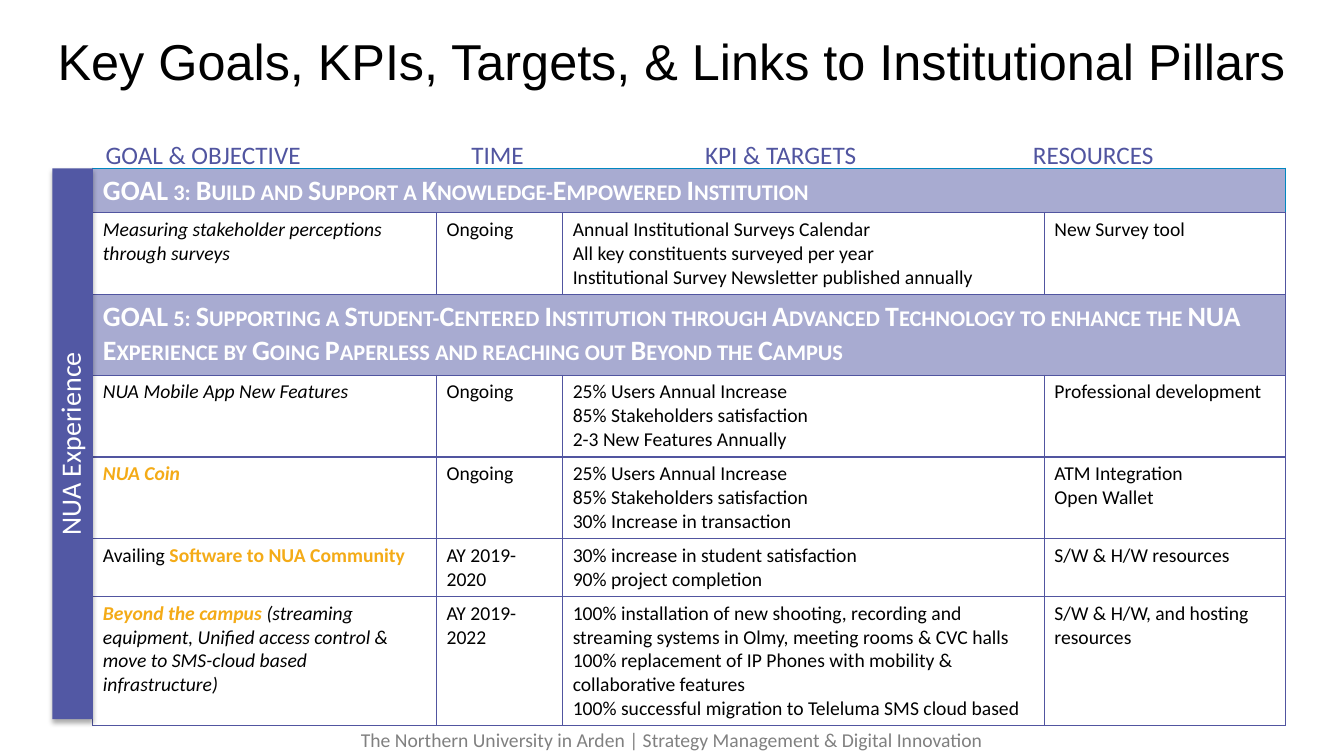
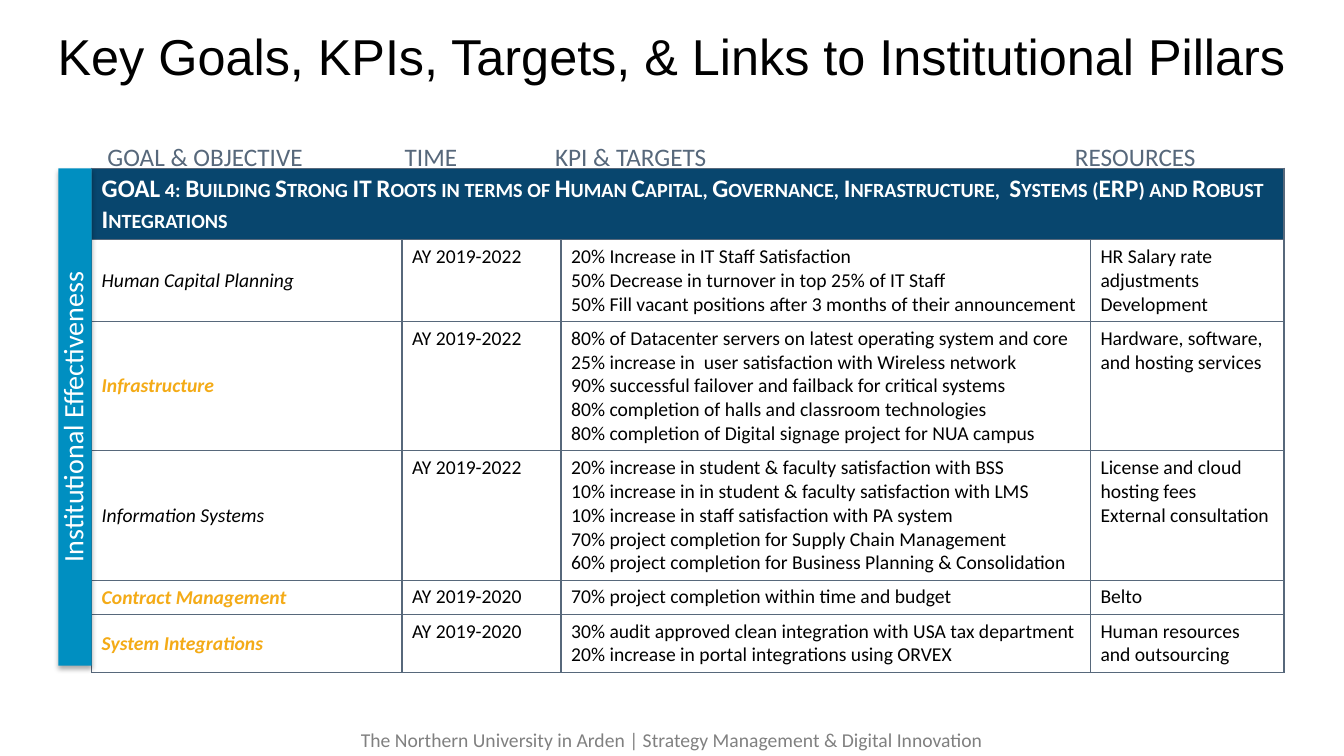
"""Build two slides of strategic goals with KPI tables and pillar bars."""
import pptx
import pptx.dml.color
import pptx.enum.shapes
import pptx.enum.text
import pptx.oxml
import pptx.oxml.ns
import pptx.util

Cm = pptx.util.Cm
Pt = pptx.util.Pt
RGBColor = pptx.dml.color.RGBColor
ALIGN = pptx.enum.text.PP_ALIGN
ANCHOR = pptx.enum.text.MSO_ANCHOR

BLACK = RGBColor(0x00, 0x00, 0x00)
WHITE = RGBColor(0xFF, 0xFF, 0xFF)
GREY = RGBColor(0x80, 0x80, 0x80)
ORANGE = RGBColor(0xF4, 0xAB, 0x17)
VIOLET = RGBColor(0x52, 0x58, 0xA4)
VIOLET_LINE = RGBColor(0x51, 0x55, 0xA0)
BLUE = RGBColor(0x00, 0x8F, 0xC1)
BLUE_LINE = RGBColor(0x01, 0x87, 0xC0)
NAVY = RGBColor(0x08, 0x46, 0x6E)
SLATE = RGBColor(0x57, 0x68, 0x7B)

SLIDE_WIDTH, SLIDE_HEIGHT = Cm(33.87), Cm(19.05)
TABLE_TOP = Cm(4.24)
TITLE = "Key Goals, KPIs, Targets, & Links to Institutional Pillars"
FOOTER = "The Northern University in Arden | Strategy Management & Digital Innovation"
LABELS = ["GOAL & OBJECTIVE", "TIME", "KPI & TARGETS", "RESOURCES"]

PLAIN = {"size": Pt(14), "name": "Calibri", "color": BLACK}
ITALIC = {**PLAIN, "italic": True}
STRONG = {**PLAIN, "bold": True, "color": ORANGE}
ACCENT = {**STRONG, "italic": True}
TITLE_FORMAT = {"size": Pt(36), "name": "Arial", "color": BLACK}
FOOTER_FORMAT = {**PLAIN, "color": GREY}
BAR_FORMAT = {**PLAIN, "size": Pt(20), "color": WHITE}
GOAL_FORMAT = {**BAR_FORMAT, "bold": True}

SLIDES = [
    {
        "title_top": Cm(0.2),
        "pillar": "NUA Experience",
        "bar_color": VIOLET,
        "bar_width": Cm(1.02),
        "table_left": Cm(2.34),
        "line_color": VIOLET_LINE,
        "goal_fill": VIOLET,
        "goal_alpha": 50,
        "goal_size": Pt(20),
        "top_edge": BLUE_LINE,
        "objective_anchor": ANCHOR.TOP,
        "label_place": (Cm(2.41), Cm(3.38)),
        "label_tabs": [Cm(9.22), Cm(15.11), Cm(23.37)],
        "columns": [8.66, 3.18, 12.14, 6.07],
        "heights": [1.08, 2.04, 2.04, 2.04, 2.04, 1.44, 3.2],
        "rows": [
            "GOAL 3: Build and Support a Knowledge-Empowered Institution",
            ([("Measuring stakeholder perceptions through surveys", ITALIC)], "Ongoing",
             ["Annual Institutional Surveys Calendar",
              "All key constituents surveyed per year",
              "Institutional Survey Newsletter published annually"],
             ["New Survey tool"]),
            "GOAL 5: Supporting a Student-Centered Institution through Advanced Technology "
            "to enhance the NUA Experience by Going Paperless and reaching out Beyond the Campus",
            ([("NUA Mobile App New Features", ITALIC)], "Ongoing",
             ["25% Users Annual Increase", "85% Stakeholders satisfaction",
              "2-3 New Features Annually"],
             ["Professional development"]),
            ([("NUA Coin", ACCENT)], "Ongoing",
             ["25% Users Annual Increase", "85% Stakeholders satisfaction",
              "30% Increase in transaction"],
             ["ATM Integration", "Open Wallet"]),
            ([("Availing ", PLAIN), ("Software to NUA Community", STRONG)], "AY 2019-2020",
             ["30% increase in student satisfaction", "90% project completion"],
             ["S/W & H/W resources"]),
            ([("Beyond the campus ", ACCENT),
              ("(streaming equipment, Unified access control & move to SMS-cloud "
               "based infrastructure)", ITALIC)], "AY 2019-2022",
             ["100% installation of new shooting, recording and streaming systems in Olmy, "
              "meeting rooms & CVC halls",
              "100% replacement of IP Phones with mobility & collaborative features",
              "100% successful migration to Teleluma SMS cloud based"],
             ["S/W & H/W, and hosting resources"]),
        ],
    },
    {
        "title_top": Cm(0.08),
        "pillar": "Institutional Effectiveness",
        "bar_color": BLUE,
        "bar_width": Cm(0.84),
        "table_left": Cm(2.31),
        "line_color": SLATE,
        "goal_fill": NAVY,
        "goal_alpha": 100,
        "goal_size": Pt(18),
        "top_edge": SLATE,
        "objective_anchor": ANCHOR.MIDDLE,
        "label_place": (Cm(2.46), Cm(3.43)),
        "label_tabs": [Cm(7.49), Cm(11.28), Cm(24.38)],
        "columns": [7.82, 4.01, 13.34, 4.88],
        "heights": [1.78, 2.04, 3.21, 3.21, 0.86, 1.43],
        "rows": [
            "GOAL 4: Building Strong IT Roots in terms of Human Capital, Governance, "
            "Infrastructure,  Systems (ERP) and Robust Integrations",
            ([("Human Capital Planning", ITALIC)], "AY 2019-2022",
             ["20% Increase in IT Staff Satisfaction",
              "50% Decrease in turnover in top 25% of IT Staff",
              "50% Fill vacant positions after 3 months of their announcement"],
             ["HR Salary rate adjustments", "Development"]),
            ([("Infrastructure", ACCENT)], "AY 2019-2022",
             ["80% of Datacenter servers on latest operating system and core",
              "25% increase in  user satisfaction with Wireless network",
              "90% successful failover and failback for critical systems",
              "80% completion of halls and classroom technologies",
              "80% completion of Digital signage project for NUA campus"],
             ["Hardware, software, and hosting services"]),
            ([("Information Systems", ITALIC)], "AY 2019-2022",
             ["20% increase in student & faculty satisfaction with BSS",
              "10% increase in in student & faculty satisfaction with LMS",
              "10% increase in staff satisfaction with PA system",
              "70% project completion for Supply Chain Management",
              "60% project completion for Business Planning & Consolidation"],
             ["License and cloud hosting fees", "External consultation"]),
            ([("Contract Management", ACCENT)], "AY 2019-2020",
             ["70% project completion within time and budget"], ["Belto"]),
            ([("System Integrations", ACCENT)], "AY 2019-2020",
             ["30% audit approved clean integration with USA tax department",
              "20% increase in portal integrations using ORVEX"],
             ["Human resources and outsourcing"]),
        ],
    },
]


def add_xml(parent, tag, **attributes):
    element = pptx.oxml.parse_xml(f"<a:{tag} {pptx.oxml.ns.nsdecls('a')}/>")
    for name, value in attributes.items():
        element.set(name, str(value))
    parent.append(element)
    return element


def add_run(paragraph, text, formats):
    run = paragraph.add_run()
    run.text = text
    for name, value in formats.items():
        if name == "color":
            run.font.color.rgb = value
        else:
            setattr(run.font, name, value)
    return run


def write_lines(frame, lines, formats):
    for index, line in enumerate(lines):
        paragraph = frame.add_paragraph() if index else frame.paragraphs[0]
        add_run(paragraph, line, formats)


def add_text(slide, place, text, formats, alignment):
    frame = slide.shapes.add_textbox(*place).text_frame
    frame.word_wrap = True
    paragraph = frame.paragraphs[0]
    paragraph.alignment = alignment
    add_run(paragraph, text, formats)
    return paragraph


def set_title(slide, top):
    title = slide.shapes.title
    title.left, title.top, title.width, title.height = 0, top, SLIDE_WIDTH, Cm(2.84)
    settings = {"margin_left": 0, "margin_right": 0, "margin_top": Cm(0.18),
                "margin_bottom": Cm(0.18), "vertical_anchor": ANCHOR.MIDDLE,
                "word_wrap": True, "auto_size": pptx.enum.text.MSO_AUTO_SIZE.NONE}
    for name, value in settings.items():
        setattr(title.text_frame, name, value)
    paragraph = title.text_frame.paragraphs[0]
    paragraph.alignment = ALIGN.CENTER
    paragraph.line_spacing = 0.9
    add_run(paragraph, TITLE, TITLE_FORMAT)


def set_borders(cell, colors):
    properties = cell._tc.get_or_add_tcPr()
    for side, color in zip(("lnL", "lnR", "lnT", "lnB"), colors):
        line = add_xml(properties, side, w=Pt(1))
        add_xml(add_xml(line, "solidFill"), "srgbClr", val=color)


def fill_goal(cell, text, content):
    run = add_run(cell.text_frame.paragraphs[0], text,
                  {**GOAL_FORMAT, "size": content["goal_size"]})
    run._r.get_or_add_rPr().set("cap", "small")
    cell.fill.solid()
    cell.fill.fore_color.rgb = content["goal_fill"]
    color = cell._tc.tcPr.find(".//" + pptx.oxml.ns.qn("a:solidFill") + "[last()]")
    fill = cell._tc.tcPr.findall(pptx.oxml.ns.qn("a:solidFill"))[-1]
    add_xml(fill[0], "alpha", val=content["goal_alpha"] * 1000)


def add_goal_table(slide, content):
    widths, heights = content["columns"], content["heights"]
    frame = slide.shapes.add_table(len(heights), len(widths), content["table_left"], TABLE_TOP,
                                   Cm(sum(widths)), Cm(sum(heights)))
    table = frame.table
    table.first_row = table.horz_banding = False
    for column, width in zip(table.columns, widths):
        column.width = Cm(width)
    for index, (row, height, values) in enumerate(zip(table.rows, heights, content["rows"])):
        row.height = Cm(height)
        edge = content["line_color"] if index else content["top_edge"]
        cells = list(row.cells)
        for cell in cells:
            set_borders(cell, (edge, edge, edge, content["line_color"]))
            cell.fill.background()
        if isinstance(values, str):
            cells[0].merge(cells[-1])
            fill_goal(cells[0], values, content)
            continue
        objective, time, targets, resources = values
        cells[0].vertical_anchor = content["objective_anchor"]
        for text, formats in objective:
            add_run(cells[0].text_frame.paragraphs[0], text, formats)
        for cell, lines in zip(cells[1:], ([time], targets, resources)):
            write_lines(cell.text_frame, lines, PLAIN)


def add_labels(slide, content):
    formats = {**PLAIN, "size": Pt(18), "color": content["line_color"]}
    place = (*content["label_place"], Cm(30.66), Cm(1.02))
    paragraph = add_text(slide, place, "\t".join(LABELS), formats, ALIGN.LEFT)
    tabs = add_xml(paragraph._p.get_or_add_pPr(), "tabLst")
    for position in content["label_tabs"]:
        add_xml(tabs, "tab", pos=position, algn="l")


def add_pillar_bar(slide, content):
    length, width = Cm(sum(content["heights"])), content["bar_width"]
    left = content["table_left"] - (width + length) // 2
    top = TABLE_TOP + (length - width) // 2
    bar = slide.shapes.add_shape(pptx.enum.shapes.MSO_SHAPE.RECTANGLE, left, top, length, width)
    bar.rotation = 270
    bar.fill.solid()
    bar.fill.fore_color.rgb = content["bar_color"]
    bar.line.fill.background()
    bar.shadow.inherit = False
    effects = bar._element.spPr.find(pptx.oxml.ns.qn("a:effectLst"))
    shadow = add_xml(effects, "outerShdw", blurRad=Pt(3.5), dist=Pt(2.2), dir=5400000,
                     rotWithShape=0)
    add_xml(add_xml(shadow, "srgbClr", val=BLACK), "alpha", val=32000)
    bar.text_frame.vertical_anchor = ANCHOR.MIDDLE
    paragraph = bar.text_frame.paragraphs[0]
    paragraph.alignment = ALIGN.CENTER
    paragraph.line_spacing = Pt(20)
    add_run(paragraph, content["pillar"], BAR_FORMAT)


def main():
    presentation = pptx.Presentation()
    presentation.slide_width, presentation.slide_height = SLIDE_WIDTH, SLIDE_HEIGHT
    for content in SLIDES:
        slide = presentation.slides.add_slide(presentation.slide_layouts[5])
        set_title(slide, content["title_top"])
        add_goal_table(slide, content)
        add_labels(slide, content)
        add_pillar_bar(slide, content)
        add_text(slide, (0, Cm(18.21), SLIDE_WIDTH, Cm(0.86)), FOOTER, FOOTER_FORMAT,
                 ALIGN.CENTER)
    presentation.save("out.pptx")


if __name__ == "__main__":
    main()
